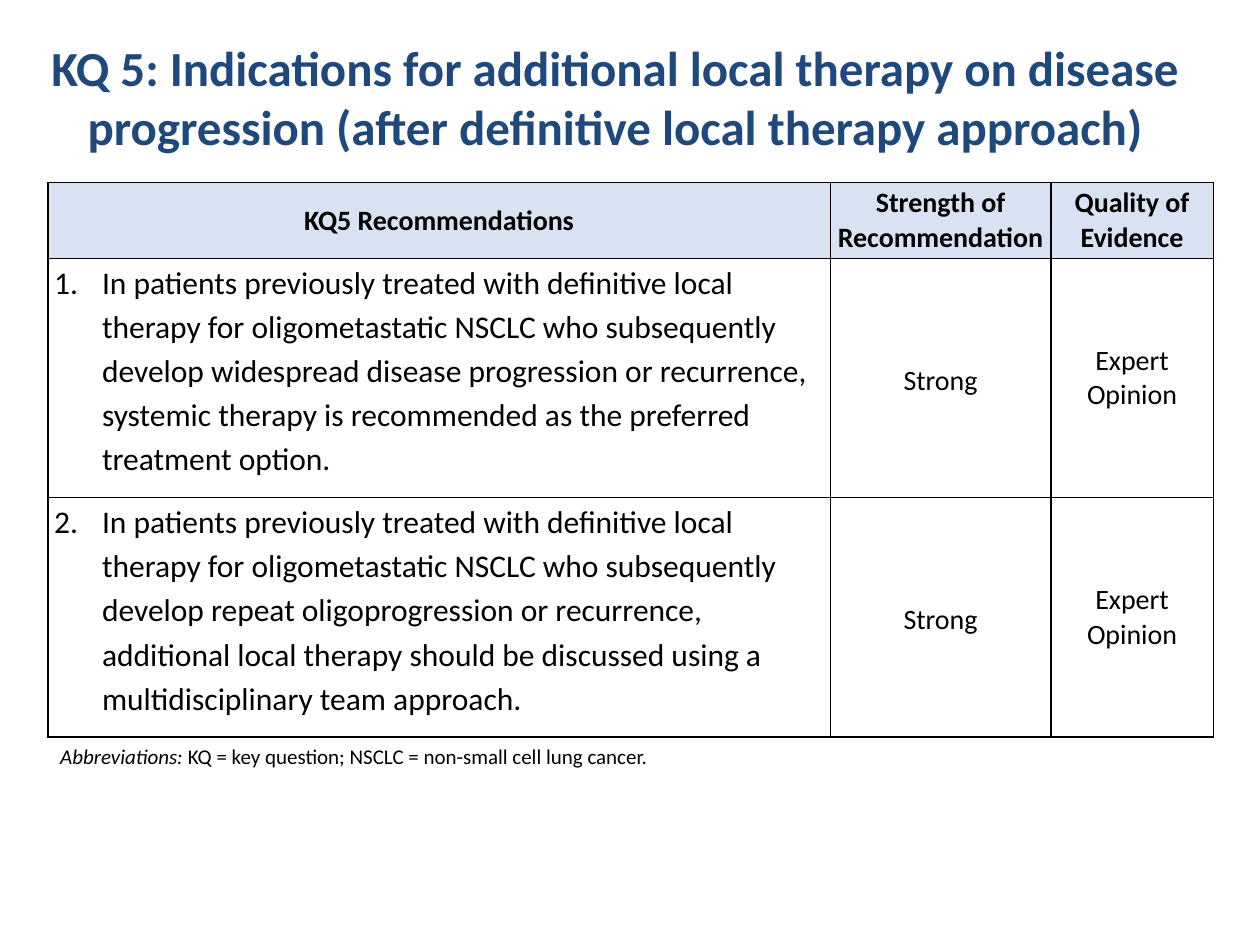
from lxml import etree
from pptx import Presentation
from pptx.dml.color import RGBColor
from pptx.enum.text import MSO_ANCHOR, MSO_AUTO_SIZE, PP_ALIGN
from pptx.oxml.ns import qn
from pptx.util import Inches, Pt

CENTER, LEFT = PP_ALIGN.CENTER, PP_ALIGN.LEFT
TOP, MIDDLE = MSO_ANCHOR.TOP, MSO_ANCHOR.MIDDLE
TITLE_ONLY = 5
FONT = "Calibri"
COLORS = {"title": "1F497D", "text": "000000", "header": "D9E2F3", "border": "000000"}

TITLE = ("KQ 5: Indications for additional local therapy on disease progression "
         "(after definitive local therapy approach)")
HEADERS = ["KQ5 Recommendations", "Strength of Recommendation", "Quality of Evidence"]
RECOMMENDATIONS = [
    ("In patients previously treated with definitive local therapy for oligometastatic "
     "NSCLC who subsequently develop widespread disease progression or recurrence, "
     "systemic therapy is recommended as the preferred treatment option.",
     "Strong", "Expert Opinion"),
    ("In patients previously treated with definitive local therapy for oligometastatic "
     "NSCLC who subsequently develop repeat oligoprogression or recurrence, additional "
     "local therapy should be discussed using a multidisciplinary team approach.",
     "Strong", "Expert Opinion"),
]
ABBREVIATIONS = [("Abbreviations:", True),
                 (" KQ = key question; NSCLC = non-small cell lung cancer.", False)]

TABLE_LEFT, TABLE_TOP = 0.38, 1.45
COLUMN_WIDTHS = [6.21, 1.75, 1.29]
ROW_HEIGHTS = [0.6] + [1.9] * len(RECOMMENDATIONS)

HEADER_FORMAT = {"size": Pt(16), "bold": True}
COLUMN_FORMATS = [
    {"size": Pt(18), "align": LEFT, "anchor": TOP, "spacing": 1.15},
    {"size": Pt(16), "align": CENTER, "anchor": MIDDLE, "spacing": 1.15},
    {"size": Pt(16), "align": CENTER, "anchor": MIDDLE, "spacing": 1.0},
]


def format_font(font, color="text", **values):
    for name, value in {"name": FONT, "bold": False, **values}.items():
        setattr(font, name, value)
    font.color.rgb = RGBColor.from_string(COLORS[color])


def place(shape, left, top, width, height):
    for name, value in zip(("left", "top", "width", "height"), (left, top, width, height)):
        setattr(shape, name, Inches(value))


def number_paragraph(paragraph, number):
    """Give the paragraph a hanging automatic number."""
    properties = paragraph._p.get_or_add_pPr()
    properties.set("marL", str(Inches(0.38)))
    properties.set("indent", str(Inches(-0.38)))
    etree.SubElement(properties, qn("a:buFont"), typeface="+mj-lt")
    etree.SubElement(properties, qn("a:buAutoNum"), type="arabicPeriod", startAt=str(number))


def add_borders(cell):
    properties = cell._tc.get_or_add_tcPr()
    for side in ("lnL", "lnR", "lnT", "lnB"):
        line = etree.SubElement(properties, qn(f"a:{side}"), w=str(Pt(1)))
        fill = etree.SubElement(line, qn("a:solidFill"))
        etree.SubElement(fill, qn("a:srgbClr"), val=COLORS["border"])


def fill_cell(cell, text, size, align=CENTER, anchor=MIDDLE, spacing=1.0,
              bold=False, fill=None, number=None):
    cell.margin_left = cell.margin_right = Inches(0.05)
    cell.margin_top = cell.margin_bottom = 0
    cell.vertical_anchor = anchor
    add_borders(cell)
    if fill:
        cell.fill.solid()
        cell.fill.fore_color.rgb = RGBColor.from_string(COLORS[fill])
    else:
        cell.fill.background()
    paragraph = cell.text_frame.paragraphs[0]
    paragraph.alignment = align
    paragraph.line_spacing = spacing
    if number:
        number_paragraph(paragraph, number)
    run = paragraph.add_run()
    run.text = text
    format_font(run.font, size=size, bold=bold)


def add_title(slide):
    title = slide.shapes.title
    place(title, 0.26, 0.25, 9.24, 0.63)
    frame = title.text_frame
    frame.text = TITLE
    frame.word_wrap = True
    frame.auto_size = MSO_AUTO_SIZE.NONE
    frame.vertical_anchor = TOP
    paragraph = frame.paragraphs[0]
    paragraph.alignment = CENTER
    format_font(paragraph.runs[0].font, "title", size=Pt(28), bold=True)


def add_recommendation_table(slide):
    frame = slide.shapes.add_table(
        len(ROW_HEIGHTS), len(COLUMN_WIDTHS), Inches(TABLE_LEFT), Inches(TABLE_TOP),
        Inches(sum(COLUMN_WIDTHS)), Inches(sum(ROW_HEIGHTS)))
    table = frame.table
    table.horz_banding = False
    for column, width in zip(table.columns, COLUMN_WIDTHS):
        column.width = Inches(width)
    for row, height in zip(table.rows, ROW_HEIGHTS):
        row.height = Inches(height)
    for column, text in enumerate(HEADERS):
        fill_cell(table.cell(0, column), text, fill="header", **HEADER_FORMAT)
    for number, recommendation in enumerate(RECOMMENDATIONS, start=1):
        for column, text in enumerate(recommendation):
            fill_cell(table.cell(number, column), text,
                      number=number if column == 0 else None, **COLUMN_FORMATS[column])


def add_abbreviations(slide):
    top = TABLE_TOP + sum(ROW_HEIGHTS)
    box = slide.shapes.add_textbox(Inches(TABLE_LEFT), Inches(top), Inches(7.84), Inches(0.3))
    box.text_frame.word_wrap = True
    box.text_frame.auto_size = MSO_AUTO_SIZE.SHAPE_TO_FIT_TEXT
    for text, italic in ABBREVIATIONS:
        run = box.text_frame.paragraphs[0].add_run()
        run.text = text
        format_font(run.font, size=Pt(12), italic=italic)


def main():
    presentation = Presentation()
    presentation.slide_width, presentation.slide_height = Inches(10), Inches(7.5)
    slide = presentation.slides.add_slide(presentation.slide_layouts[TITLE_ONLY])
    add_title(slide)
    add_recommendation_table(slide)
    add_abbreviations(slide)
    presentation.save("out.pptx")


if __name__ == "__main__":
    main()
